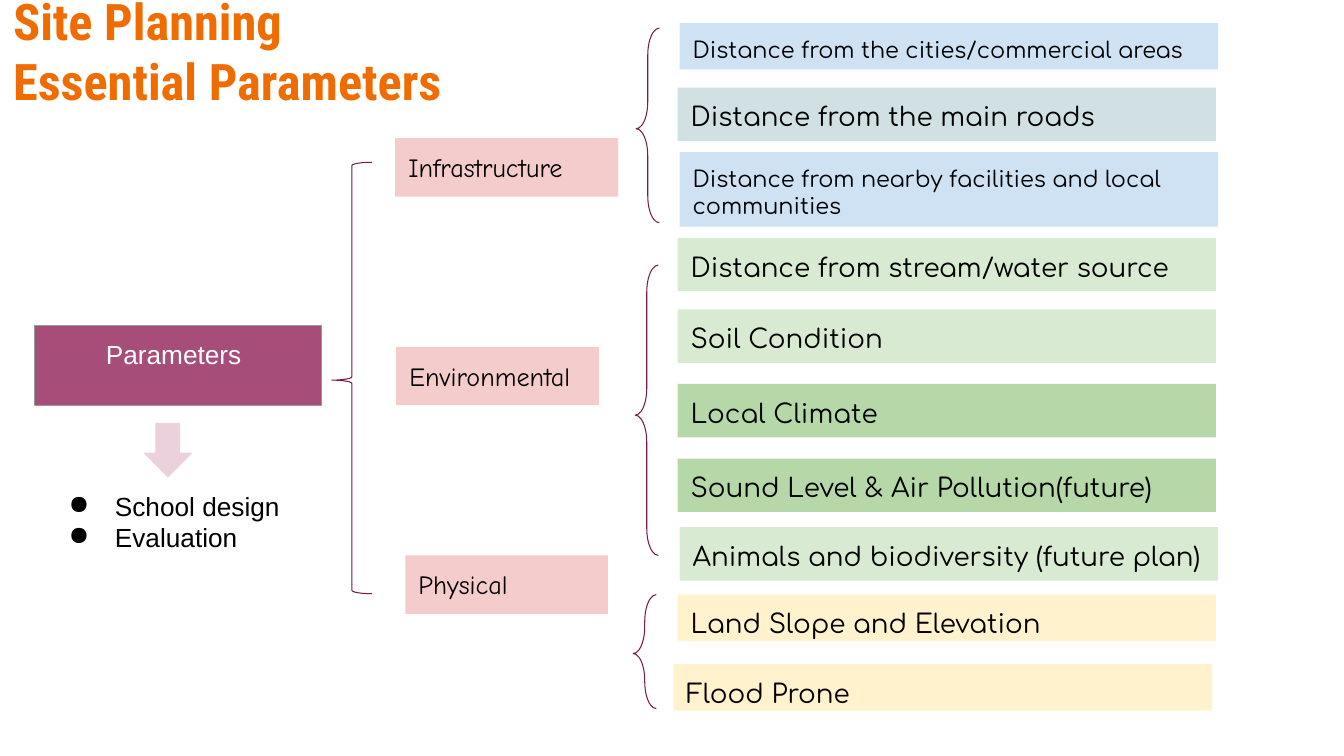
import pptx
import pptx.util
import pptx.dml.color
import pptx.enum.shapes
import pptx.enum.text
import pptx.oxml.ns
import lxml.etree

Inches = pptx.util.Inches
RGBColor = pptx.dml.color.RGBColor
Shape = pptx.enum.shapes.MSO_SHAPE
Anchor = pptx.enum.text.MSO_ANCHOR

BLACK = RGBColor(0x00, 0x00, 0x00)
WHITE = RGBColor(0xFF, 0xFF, 0xFF)
GRAY = RGBColor(0x99, 0x99, 0x99)
ORANGE = RGBColor(0xEF, 0x6C, 0x00)
PLUM = RGBColor(0xA6, 0x4D, 0x79)
DARK_PLUM = RGBColor(0x74, 0x1B, 0x47)
PALE_PLUM = RGBColor(0xEA, 0xD1, 0xDC)
PINK = RGBColor(0xF4, 0xCC, 0xCC)
BLUE = RGBColor(0xCF, 0xE2, 0xF3)
TEAL = RGBColor(0xD0, 0xE0, 0xE3)
PALE_GREEN = RGBColor(0xD9, 0xEA, 0xD3)
GREEN = RGBColor(0xB6, 0xD7, 0xA8)
YELLOW = RGBColor(0xFF, 0xF2, 0xCC)

TITLE_LINES = ["Site Planning", "Essential Parameters"]
PURPOSES = ["School design", "Evaluation"]
# name, left, top, width
GROUPS = [
    ("Infrastructure", 3.92, 1.37, 2.21),
    ("Environmental", 3.93, 3.44, 2.01),
    ("Physical", 4.02, 5.51, 2.01),
]
# text, left, top, height, text size, fill
FACTORS = [
    ("Distance from the cities/commercial areas", 6.74, 0.23, 0.46, 16, BLUE),
    ("Distance from the main roads", 6.72, 0.87, 0.53, 18.7, TEAL),
    ("Distance from nearby facilities and local communities", 6.74, 1.51, 0.74, 16, BLUE),
    ("Distance from stream/water source", 6.72, 2.36, 0.53, 18.7, PALE_GREEN),
    ("Soil Condition", 6.72, 3.07, 0.53, 18.7, PALE_GREEN),
    ("Local Climate", 6.72, 3.81, 0.53, 18.7, GREEN),
    ("Sound Level & Air Pollution(future)", 6.72, 4.55, 0.53, 18.7, GREEN),
    ("Animals and biodiversity (future plan)", 6.74, 5.23, 0.53, 18.7, PALE_GREEN),
    ("Land Slope and Elevation", 6.72, 5.9, 0.46, 18.7, YELLOW),
    ("Flood Prone", 6.68, 6.59, 0.46, 18.7, YELLOW),
]
# left, top, width, height, curve, tip position
BRACES = [
    (3.29, 1.61, 0.4, 4.28, 0.083, 0.505),
    (6.31, 0.28, 0.23, 1.93, 1.167, 0.517),
    (6.3, 2.63, 0.23, 2.88, 1.167, 0.517),
    (6.28, 5.9, 0.23, 1.13, 1.167, 0.517),
]
FACTOR_WIDTH = 5.34
GROUP_HEIGHT = 0.58
INSET = 0.13
BODY_SIZE = 18.7


def set_frame(frame, anchor=Anchor.TOP, left=INSET):
    settings = {
        "margin_left": Inches(left), "margin_right": Inches(INSET),
        "margin_top": Inches(INSET), "margin_bottom": Inches(INSET),
        "word_wrap": True, "vertical_anchor": anchor,
        "auto_size": pptx.enum.text.MSO_AUTO_SIZE.NONE,
    }
    for name, value in settings.items():
        setattr(frame, name, value)


def add_span(para, text, font, size, color, bold=False):
    para.alignment = pptx.enum.text.PP_ALIGN.LEFT
    span = para.add_run()
    span.text = text
    for name, value in {"name": font, "size": pptx.util.Pt(size), "bold": bold}.items():
        setattr(span.font, name, value)
    span.font.color.rgb = color


def add_figure(page, kind, place, fill=None, line=None, adjustments=()):
    shape = page.shapes.add_shape(kind, *map(Inches, place))
    shape.shadow.inherit = False
    for index, value in enumerate(adjustments):
        shape.adjustments[index] = value
    if fill is None:
        shape.fill.background()
    else:
        shape.fill.solid()
        shape.fill.fore_color.rgb = fill
    if line is None:
        shape.line.fill.background()
    else:
        shape.line.color.rgb = line
        shape.line.width = pptx.util.Pt(0.75)
    return shape


def add_label(page, place, text, fill, font, size=BODY_SIZE, color=BLACK, line=None, left=INSET):
    box = add_figure(page, Shape.RECTANGLE, place, fill, line)
    set_frame(box.text_frame, left=left)
    add_span(box.text_frame.paragraphs[0], text, font, size, color)


def add_bullet(para):
    properties = para._p.get_or_add_pPr()
    properties.set("marL", str(Inches(0.67)))
    properties.set("indent", str(Inches(-0.46)))
    bullet = lxml.etree.SubElement(properties, pptx.oxml.ns.qn("a:buChar"))
    bullet.set("char", "●")


def add_title(page):
    title = page.shapes.title
    place = {"left": 0, "top": -0.23, "width": 12.42, "height": 1.03}
    for name, value in place.items():
        setattr(title, name, Inches(value))
    set_frame(title.text_frame)
    para = title.text_frame.paragraphs[0]
    for index, text in enumerate(TITLE_LINES):
        if index:
            para.add_line_break()
        add_span(para, text, "Roboto Condensed", 36, ORANGE, bold=True)


def add_purposes(page):
    box = page.shapes.add_textbox(*map(Inches, (0.34, 4.61, 4.33, 1.13)))
    frame = box.text_frame
    set_frame(frame, Anchor.MIDDLE)
    for index, text in enumerate(PURPOSES):
        para = frame.add_paragraph() if index else frame.paragraphs[0]
        add_span(para, text, "Arial", BODY_SIZE, BLACK)
        add_bullet(para)


def main():
    deck = pptx.Presentation()
    deck.slide_width, deck.slide_height = Inches(13.33), Inches(7.5)
    page = deck.slides.add_slide(deck.slide_layouts[5])
    add_title(page)
    add_label(page, (0.34, 3.23, 2.85, 0.79), "Parameters", PLUM, "Arial",
              color=WHITE, line=GRAY, left=0.71)
    for name, left, top, width in GROUPS:
        add_label(page, (left, top, width, GROUP_HEIGHT), name, PINK, "Comic Neue")
    add_purposes(page)
    add_figure(page, Shape.DOWN_ARROW, (1.43, 4.2, 0.47, 0.53), PALE_PLUM, PALE_PLUM, (0.5, 0.5))
    for text, left, top, height, size, fill in FACTORS:
        add_label(page, (left, top, FACTOR_WIDTH, height), text, fill, "Comfortaa", size)
    for *place, curve, tip in BRACES:
        add_figure(page, Shape.LEFT_BRACE, place, line=DARK_PLUM, adjustments=(curve, tip))
    deck.save("out.pptx")


if __name__ == "__main__":
    main()
